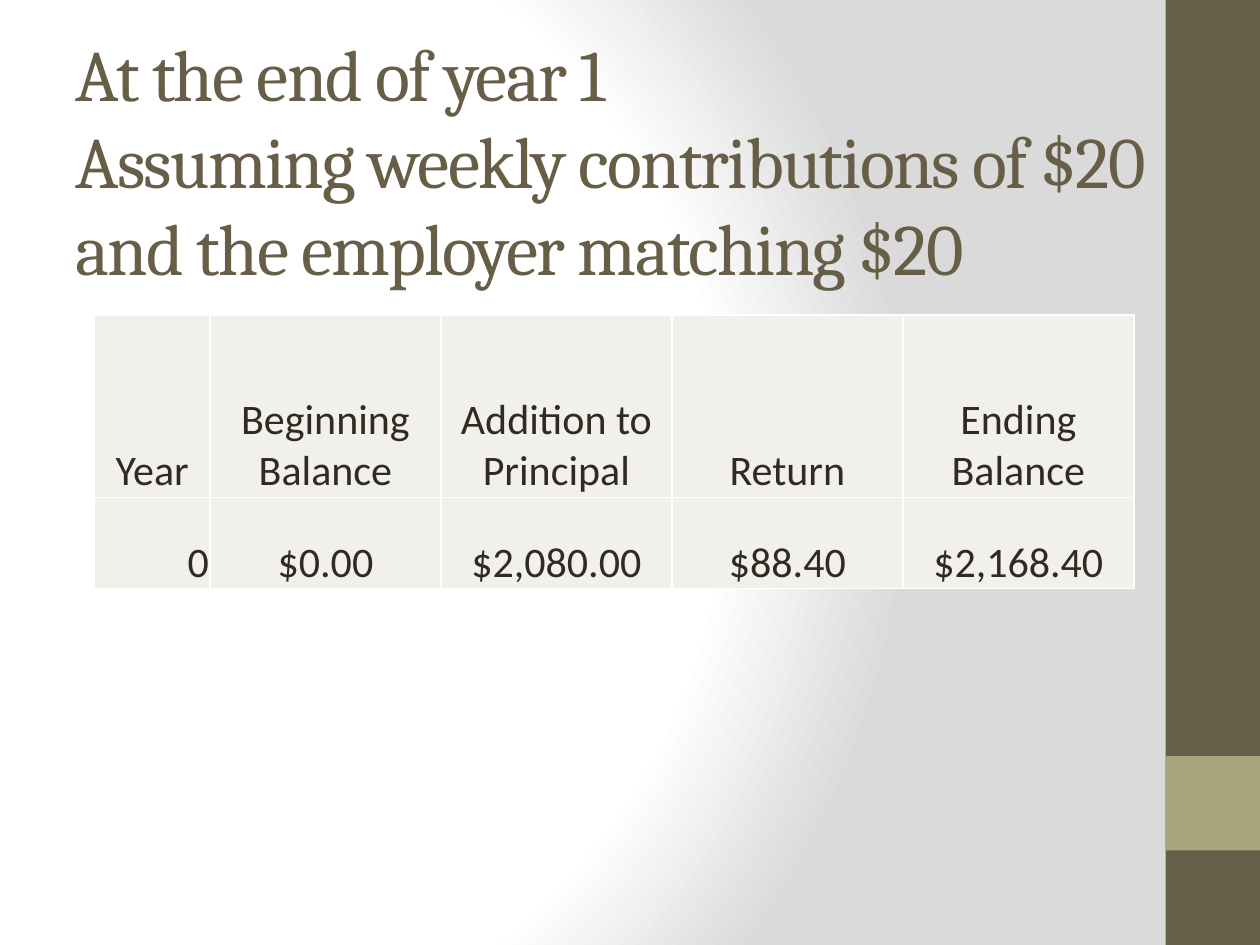
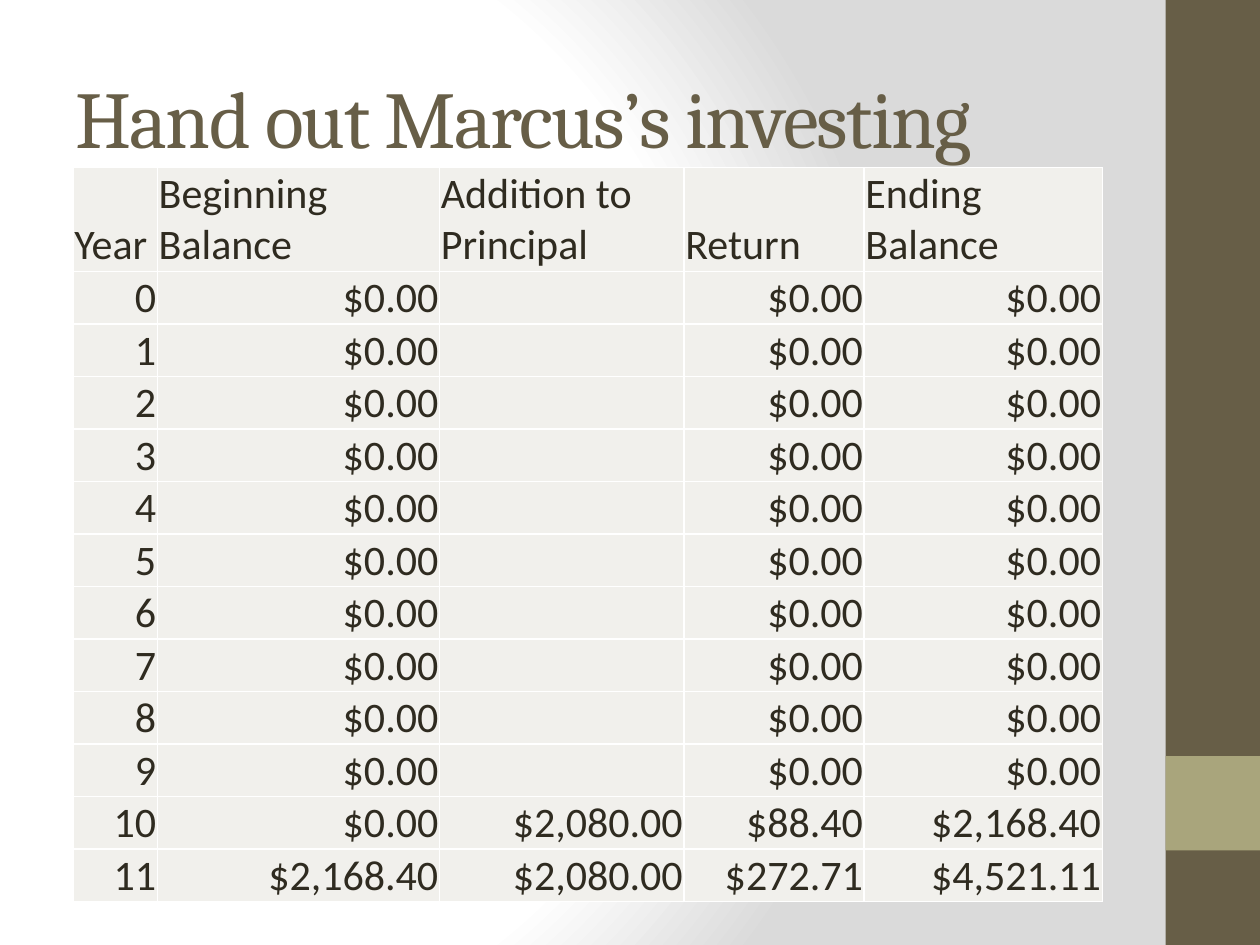
from dataclasses import dataclass

from pptx import Presentation
from pptx.dml.color import RGBColor
from pptx.enum.shapes import MSO_SHAPE
from pptx.enum.text import MSO_ANCHOR, MSO_AUTO_SIZE, PP_ALIGN
from pptx.oxml import parse_xml
from pptx.oxml.ns import nsdecls, qn
from pptx.util import Inches, Pt


@dataclass(frozen=True)
class Theme:
    band: str = "675E47"
    accent: str = "A9A57C"
    text: str = "2F2B20"
    cell: str = "F1F0EC"
    white: str = "FFFFFF"
    shade: str = "DADADA"
    title_font: str = "Cambria"
    body_font: str = "Calibri"
    title_size: float = 46
    long_title_size: float = 41.4
    body_size: float = 24
    border: float = 1
    inset: float = 0.01


THEME = Theme()
TITLE_ONLY = 5
LEFT, CENTER, RIGHT = PP_ALIGN.LEFT, PP_ALIGN.CENTER, PP_ALIGN.RIGHT
HEADER = ["Year", "Beginning Balance", "Addition to Principal", "Return", "Ending Balance"]
FIRST_YEAR = ["0", "$0.00", "$2,080.00", "$88.40", "$2,168.40"]


def rgb(color):
    return RGBColor.from_string(color)


def style_font(font, name, size, color):
    font.name = name
    font.size = Pt(size)
    font.color.rgb = rgb(color)


def set_background(master):
    master.background.fill.solid()
    solid = next(master.element.iter(qn("a:solidFill")))
    stops = "".join(
        f'<a:gs pos="{pos * 1000}"><a:srgbClr val="{color}"/></a:gs>'
        for pos, color in ((0, THEME.white), (75, THEME.white), (100, THEME.shade))
    )
    gradient = parse_xml(
        f'<a:gradFill {nsdecls("a")} rotWithShape="1"><a:gsLst>{stops}</a:gsLst>'
        '<a:path path="circle"><a:fillToRect l="20000" t="50000" r="100000" b="50000"/>'
        "</a:path></a:gradFill>"
    )
    solid.getparent().replace(solid, gradient)


def add_side_band(slide, master, left, top, width, height):
    parts = ((top, height, THEME.band), (top + 0.8 * height, width, THEME.accent))
    for i, (y, h, color) in enumerate(parts):
        sp = slide.shapes.add_shape(
            MSO_SHAPE.RECTANGLE, Inches(left), Inches(y), Inches(width), Inches(h)
        )
        sp.shadow.inherit = False
        sp.fill.solid()
        sp.fill.fore_color.rgb = rgb(color)
        sp.line.fill.background()
        sp.element.nvSpPr.cNvPr.set("id", str(100 + i))
        master.shapes.element.insert(2 + i, sp.element)


def set_title(slide, text, box, size=THEME.title_size):
    title = slide.shapes.title
    title.left, title.top, title.width, title.height = map(Inches, box)
    tf = title.text_frame
    tf.word_wrap = True
    tf.auto_size = MSO_AUTO_SIZE.NONE
    tf.vertical_anchor = MSO_ANCHOR.MIDDLE
    tf.text = text
    p = tf.paragraphs[0]
    p.alignment = LEFT
    style_font(p.font, THEME.title_font, size, THEME.band)
    for r in p.runs:
        r.font.size = Pt(size)
        r.font._element.set("spc", "-100")
    return tf


def style_cell(cell, text, align):
    cell.text = text
    cell.vertical_anchor = MSO_ANCHOR.BOTTOM
    cell.margin_left = cell.margin_right = cell.margin_top = Inches(THEME.inset)
    cell.margin_bottom = 0
    cell.fill.solid()
    cell.fill.fore_color.rgb = rgb(THEME.cell)
    p = cell.text_frame.paragraphs[0]
    p.alignment = align
    style_font(p.font, THEME.body_font, THEME.body_size, THEME.text)
    for i, side in enumerate(("lnL", "lnR", "lnT", "lnB")):
        line = parse_xml(
            f'<a:{side} {nsdecls("a")} w="{Pt(THEME.border)}"><a:solidFill>'
            f'<a:srgbClr val="{THEME.white}"/></a:solidFill></a:{side}>'
        )
        cell._tc.tcPr.insert(i, line)


def add_balance_table(slide, rows, box, col_weights, align):
    left, top, width, height = map(Inches, box)
    table = slide.shapes.add_table(len(rows), len(HEADER), left, top, width, height).table
    for column, weight in zip(table.columns, col_weights):
        column.width = int(width * weight / sum(col_weights))
    unit = height / (len(rows) + 1)
    for i, values in enumerate(rows):
        table.rows[i].height = int(unit * (2 if i == 0 else 1))
        for j, value in enumerate(values):
            style_cell(table.cell(i, j), value, align(i, j))


def build_first_year(slide):
    tf = set_title(
        slide,
        "At the end of year 1\v"
        "Assuming weekly contributions of $20 and the employer matching $20",
        (0.5, 0.3, 9, 2.62),
        THEME.long_title_size,
    )
    tf.margin_top, tf.margin_bottom = 0, Inches(0.69)
    add_balance_table(
        slide,
        [HEADER, FIRST_YEAR],
        (0.75, 2.5, 8.25, 2.17),
        (1, 2, 2, 2, 2),
        lambda row, col: RIGHT if row and col == 0 else CENTER,
    )


def build_investing(slide):
    set_title(slide, "Hand out Marcus’s investing", (0.5, 0.3, 8.33, 1.25))
    idle_years = [[str(year), "$0.00", "", "$0.00", "$0.00"] for year in range(10)]
    active_years = [
        ["10", *FIRST_YEAR[1:]],
        ["11", "$2,168.40", "$2,080.00", "$272.71", "$4,521.11"],
    ]
    add_balance_table(
        slide,
        [HEADER, *idle_years, *active_years],
        (0.58, 1.33, 8.17, 5.74),
        (0.67, 2.24, 1.94, 1.43, 1.89),
        lambda row, col: RIGHT if row else LEFT,
    )


def main():
    prs = Presentation()
    prs.slide_width, prs.slide_height = Inches(10), Inches(7.5)
    master = prs.slide_master
    set_background(master)
    slides = [prs.slides.add_slide(prs.slide_layouts[TITLE_ONLY]) for _ in range(2)]
    add_side_band(slides[0], master, 9.25, 0, 0.75, 7.5)
    for build, s in zip((build_first_year, build_investing), slides):
        build(s)
    prs.save("out.pptx")


if __name__ == "__main__":
    main()
